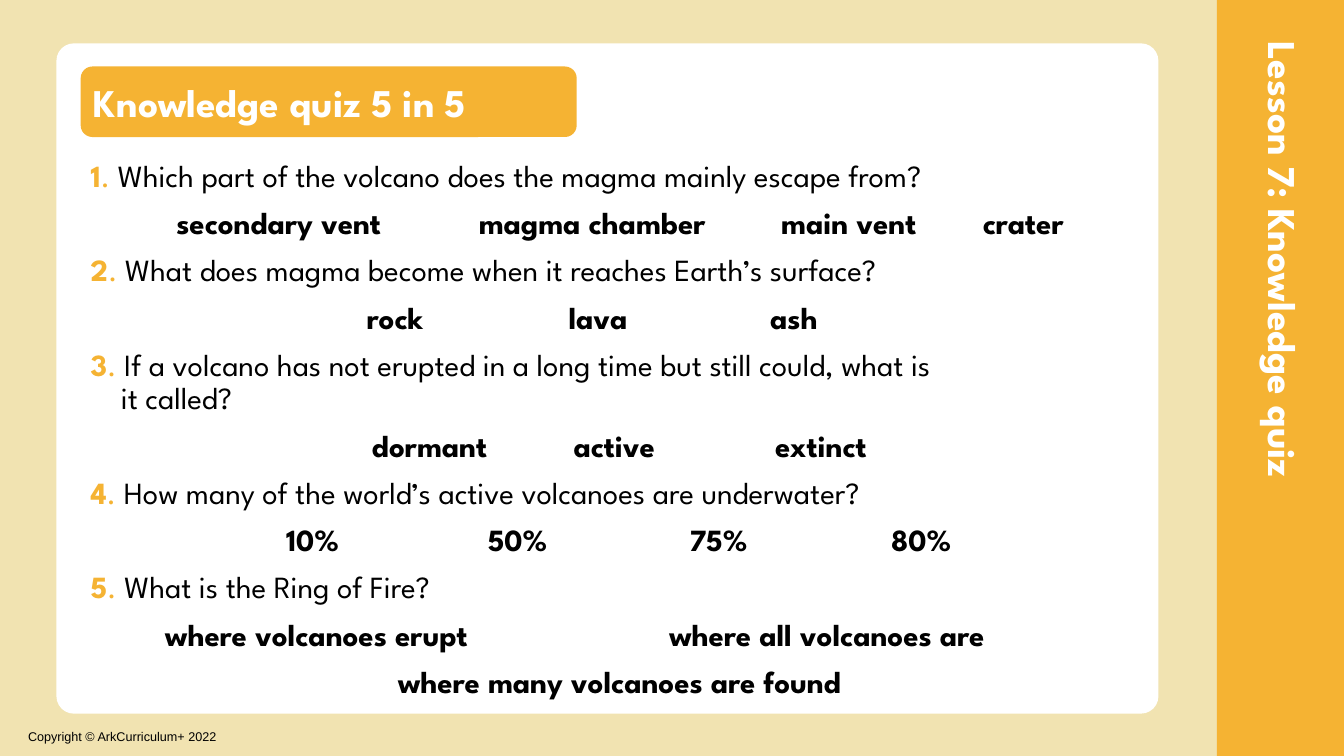
from lxml.etree import SubElement
from pptx import Presentation
from pptx.dml.color import RGBColor
from pptx.enum.shapes import MSO_SHAPE as Shape
from pptx.enum.text import MSO_ANCHOR as Anchor, PP_ALIGN as Align
from pptx.oxml.ns import qn
from pptx.util import Inches, Pt

TITLE = "Knowledge quiz 5 in 5"
SIDE_TITLE = "Lesson 7: Knowledge quiz"
COPYRIGHT = "Copyright © ArkCurriculum+ 2022"
QUIZ = [
    ("Which part of the volcano does the magma mainly escape from?",
     0.85, {0: "secondary vent", 3: "magma chamber", 6: "main vent", 8: "crater"}),
    ("What does magma become when it reaches Earth’s surface?",
     0.74, {2: "rock", 4: "lava", 6: "ash"}),
    ("If a volcano has not erupted in a long time but still could, what is\vit called?",
     0.79, {2: "dormant", 4: "active", 6: "extinct"}),
    ("How many of the world’s active volcanoes are underwater?",
     0.94, {1: "10%", 3: "50%", 5: "75%", 7: "80%"}),
    ("What is the Ring of Fire?",
     0.74, {0: "where volcanoes erupt", 5: "where all volcanoes are"}),
]
LAST_ANSWER = "where many volcanoes are found"

PEACH = RGBColor(0xFB, 0xE3, 0xD6)
SAND = RGBColor(0xF1, 0xE3, 0xB1)
AMBER = RGBColor(0xF5, 0xB3, 0x33)
WHITE = RGBColor(0xFF, 0xFF, 0xFF)
BLACK = RGBColor(0, 0, 0)

W, H = 13.33, 7.5
SIDE_X = 12.07
CARD_X, CARD_Y, CARD_W, CARD_H = 0.56, 0.43, 10.93, 6.65
TEXT_X, TEXT_Y = 0.8, 1.46
COLUMN = 1
HANG = 0.3


def add_text(p, text, size=22, color=BLACK, bold=False, font="League Spartan"):
    """Append formatted text to a paragraph, breaking lines at vertical tabs."""
    for i, line in enumerate(text.split("\v")):
        if i:
            p.add_line_break()
        r = p.add_run()
        r.text = line
        r.font.name, r.font.size, r.font.bold = font, Pt(size), bold
        r.font.color.rgb = color


def add_panel(s, kind, x, y, w, h, fill, corner=None):
    """Add a plain filled shape."""
    sp = s.shapes.add_shape(kind, Inches(x), Inches(y), Inches(w), Inches(h))
    sp.shadow.inherit = False
    sp.fill.solid()
    sp.fill.fore_color.rgb = fill
    sp.line.fill.background()
    if corner is not None:
        sp.adjustments[0] = corner
    return sp


def add_box(s, x, y, w, h, anchor=Anchor.TOP):
    """Add a wrapping text box."""
    sp = s.shapes.add_textbox(Inches(x), Inches(y), Inches(w), Inches(h))
    sp.text_frame.word_wrap = True
    sp.text_frame.vertical_anchor = anchor
    return sp


def next_paragraph(tf):
    """Return the next quiz paragraph, spaced from the one above."""
    first = not tf.paragraphs[0].runs
    p = tf.paragraphs[0] if first else tf.add_paragraph()
    p.line_spacing = 0.9
    p.space_before = Pt(0 if first else 10)
    return p


def add_question(tf, number, question):
    """Add a numbered question with a hanging indent."""
    p = next_paragraph(tf)
    pPr = p._p.get_or_add_pPr()
    pPr.set("marL", str(Inches(HANG)))
    pPr.set("indent", str(-Inches(HANG)))
    add_text(p, str(number), color=AMBER, bold=True)
    add_text(p, ".", color=AMBER)
    add_text(p, " " + question)


def add_answers(tf, start, answers):
    """Add a row of answers on tab stops."""
    p = next_paragraph(tf)
    tabs = SubElement(p._p.get_or_add_pPr(), qn("a:tabLst"))
    for column in answers:
        stop = Inches(start + column * COLUMN)
        SubElement(tabs, qn("a:tab"), pos=str(stop), algn="l")
    add_text(p, "".join("\t" + a for a in answers.values()), bold=True)


def main():
    """Build the quiz slide."""
    prs = Presentation()
    prs.slide_width, prs.slide_height = Inches(W), Inches(H)
    s = prs.slides.add_slide(prs.slide_layouts[6])
    s.background.fill.solid()
    s.background.fill.fore_color.rgb = PEACH

    add_panel(s, Shape.RECTANGLE, 0, 0, SIDE_X, H, SAND)
    add_panel(s, Shape.ROUNDED_RECTANGLE, CARD_X, CARD_Y, CARD_W, CARD_H, WHITE, 0.026)
    add_panel(s, Shape.RECTANGLE, SIDE_X, 0, W - SIDE_X, H, AMBER)

    side = add_box(s, 10.1, 2.54, 5.05, 0.6)
    side.rotation = 90
    p = side.text_frame.paragraphs[0]
    p.line_spacing = 0.8
    add_text(p, SIDE_TITLE, size=28.1, color=WHITE, bold=True)

    title = add_panel(s, Shape.ROUNDED_RECTANGLE, TEXT_X, 0.66, 4.92, 0.7, AMBER)
    title.text_frame.vertical_anchor = Anchor.MIDDLE
    p = title.text_frame.paragraphs[0]
    p.alignment = Align.LEFT
    add_text(p, TITLE, size=28, color=WHITE, bold=True)

    tf = add_box(s, TEXT_X, TEXT_Y, CARD_X + CARD_W - TEXT_X,
                 CARD_Y + CARD_H - TEXT_Y, Anchor.MIDDLE).text_frame
    for number, (question, start, answers) in enumerate(QUIZ, 1):
        add_question(tf, number, question)
        add_answers(tf, start, answers)
    p = next_paragraph(tf)
    p.alignment = Align.CENTER
    add_text(p, LAST_ANSWER, bold=True)

    footer = add_box(s, 0.18, 7.18, 4, 0.25)
    add_text(footer.text_frame.paragraphs[0], COPYRIGHT, size=9, font="Arial")

    prs.save("out.pptx")


if __name__ == "__main__":
    main()
